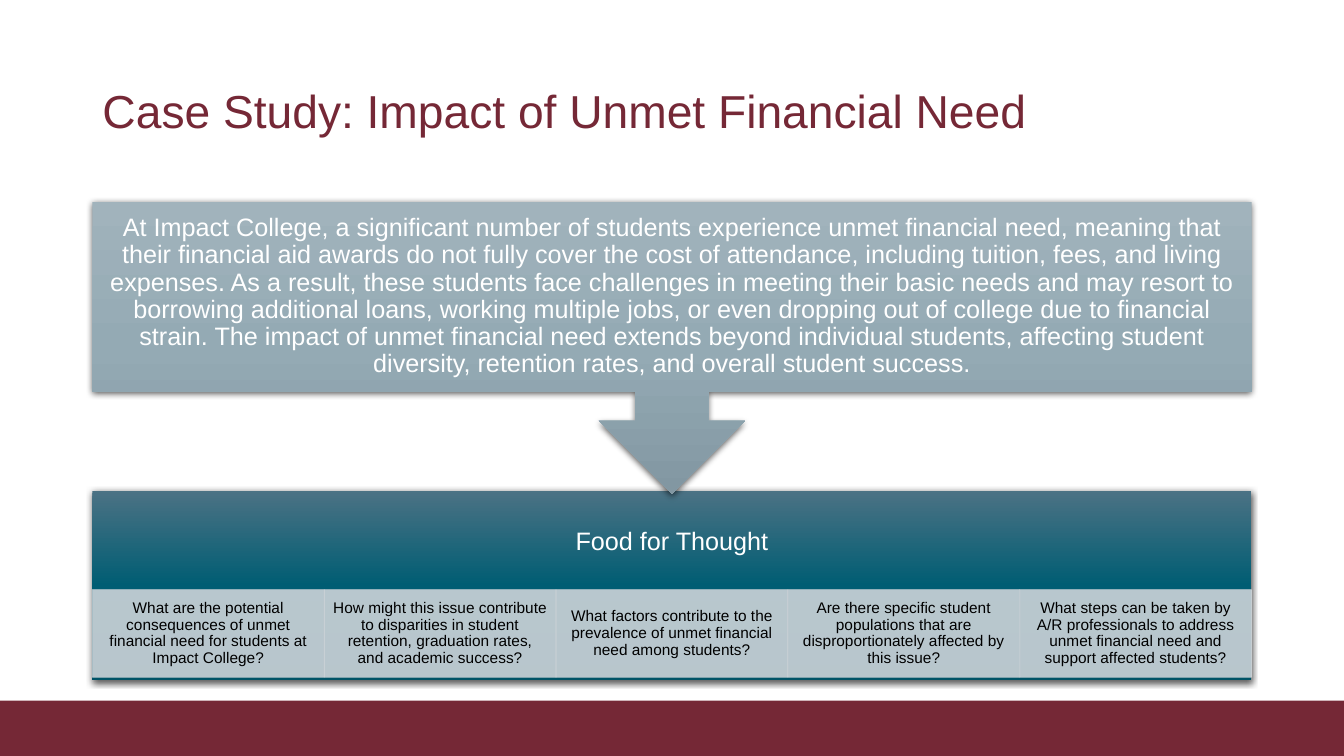
from dataclasses import dataclass

from lxml import etree
from pptx import Presentation
from pptx.dml.color import RGBColor
from pptx.enum.shapes import MSO_SHAPE
from pptx.enum.text import MSO_ANCHOR, PP_ALIGN
from pptx.oxml import parse_xml
from pptx.oxml.ns import nsdecls, qn
from pptx.util import Pt

RECTANGLE = MSO_SHAPE.RECTANGLE
ARROW_CALLOUT = MSO_SHAPE.DOWN_ARROW_CALLOUT
MIDDLE = MSO_ANCHOR.MIDDLE
LEFT, CENTER = PP_ALIGN.LEFT, PP_ALIGN.CENTER


@dataclass(frozen=True)
class Theme:
    font: str = "Arial"
    maroon: str = "752836"
    card: str = "CCD3D8"
    white: str = "FFFFFF"
    black: str = "000000"
    teal_stops: tuple = ("4B7284", "005D73", "005366")
    gray_stops: tuple = ("A1B3BC", "94AAB4", "8297A2")
    title_size: int = 33
    body_size: int = 18
    card_size: int = 11


THEME = Theme()


def write_text(shape, text, size, color, align=CENTER, margins=(10, 10, 10, 10)):
    """Fill a shape with one paragraph; margins run left, top, right, bottom."""
    frame = shape.text_frame
    frame.word_wrap = True
    frame.vertical_anchor = MIDDLE
    (frame.margin_left, frame.margin_top,
     frame.margin_right, frame.margin_bottom) = map(Pt, margins)
    para = frame.paragraphs[0]
    para.alignment = align
    para.line_spacing = 0.9
    span = para.add_run()
    span.text = text
    span.font.name = THEME.font
    span.font.size = Pt(size)
    span.font.color.rgb = RGBColor.from_string(color)


def add_gradient_block(kind, box, colors):
    """Add a shape with a top-to-bottom gradient and a soft shadow."""
    block = page.shapes.add_shape(kind, *map(Pt, box))
    block.line.fill.background()
    block.shadow.inherit = False
    properties = block.fill._xPr
    stops = "".join(
        f'<a:gs pos="{index * 50000}"><a:srgbClr val="{color}"/></a:gs>'
        for index, color in enumerate(colors))
    properties.find(qn("a:prstGeom")).addnext(parse_xml(
        f'<a:gradFill {nsdecls("a")} rotWithShape="1"><a:gsLst>{stops}</a:gsLst>'
        '<a:lin ang="5400000" scaled="0"/></a:gradFill>'))
    properties.find(qn("a:effectLst")).append(parse_xml(
        f'<a:outerShdw {nsdecls("a")} blurRad="{Pt(4.5)}" dist="{Pt(1.5)}" '
        'dir="5400000" algn="ctr" rotWithShape="0">'
        f'<a:srgbClr val="{THEME.black}"><a:alpha val="63000"/></a:srgbClr>'
        '</a:outerShdw>'))
    return block


deck = Presentation()
deck.slide_width, deck.slide_height = Pt(960), Pt(540)
page = deck.slides.add_slide(deck.slide_layouts[5])

# Title and footer band
title = page.shapes.title
title.left, title.top, title.width, title.height = map(Pt, (66, 28.8, 828, 104.4))
write_text(title, "Case Study: Impact of Unmet Financial Need", THEME.title_size,
           THEME.maroon, align=LEFT, margins=(7.2, 3.6, 7.2, 3.6))

footer = page.shapes.add_shape(RECTANGLE, 0, Pt(500.4), Pt(960), Pt(39.6))
footer.fill.solid()
footer.fill.fore_color.rgb = RGBColor.from_string(THEME.maroon)
footer.line.fill.background()
footer.shadow.inherit = False

# Discussion panel with its heading above the question cards
panel = add_gradient_block(RECTANGLE, (66, 350.6, 828, 135.4), THEME.teal_stops)
write_text(panel, "Food for Thought", THEME.body_size, THEME.white,
           margins=(10, 10, 10, 72))

questions = (
    "What are the potential consequences of unmet financial need for students at Impact College?",
    "How might this issue contribute to disparities in student retention, graduation rates, and academic success?",
    "What factors contribute to the prevalence of unmet financial need among students?",
    "Are there specific student populations that are disproportionately affected by this issue?",
    "What steps can be taken by A/R professionals to address unmet financial need and support affected students?",
)
card_width = 828 / len(questions)
for index, question in enumerate(questions):
    card = page.shapes.add_shape(RECTANGLE, Pt(66 + index * card_width), Pt(421.2),
                                 Pt(card_width), Pt(62.6))
    card.shadow.inherit = False
    card.line.width = Pt(0.5)
    for fill in (card.fill, card.line.fill):
        fill.solid()
        fill.fore_color.rgb = RGBColor.from_string(THEME.card)
    for color in card.fill._xPr.iter(qn("a:srgbClr")):
        etree.SubElement(color, qn("a:alpha"), val="90000")
    write_text(card, question, THEME.card_size, THEME.black, margins=(6.2, 1.4, 6.2, 1.4))

# Case description pointing down to the panel
case = add_gradient_block(ARROW_CALLOUT, (66, 144, 828, 208.8), THEME.gray_stops)
case.adjustments[3] = 0.65
write_text(
    case,
    "At Impact College, a significant number of students experience unmet financial need, "
    "meaning that their financial aid awards do not fully cover the cost of attendance, "
    "including tuition, fees, and living expenses. As a result, these students face "
    "challenges in meeting their basic needs and may resort to borrowing additional loans, "
    "working multiple jobs, or even dropping out of college due to financial strain. The "
    "impact of unmet financial need extends beyond individual students, affecting student "
    "diversity, retention rates, and overall student success.",
    THEME.body_size, THEME.white)

deck.save("out.pptx")
